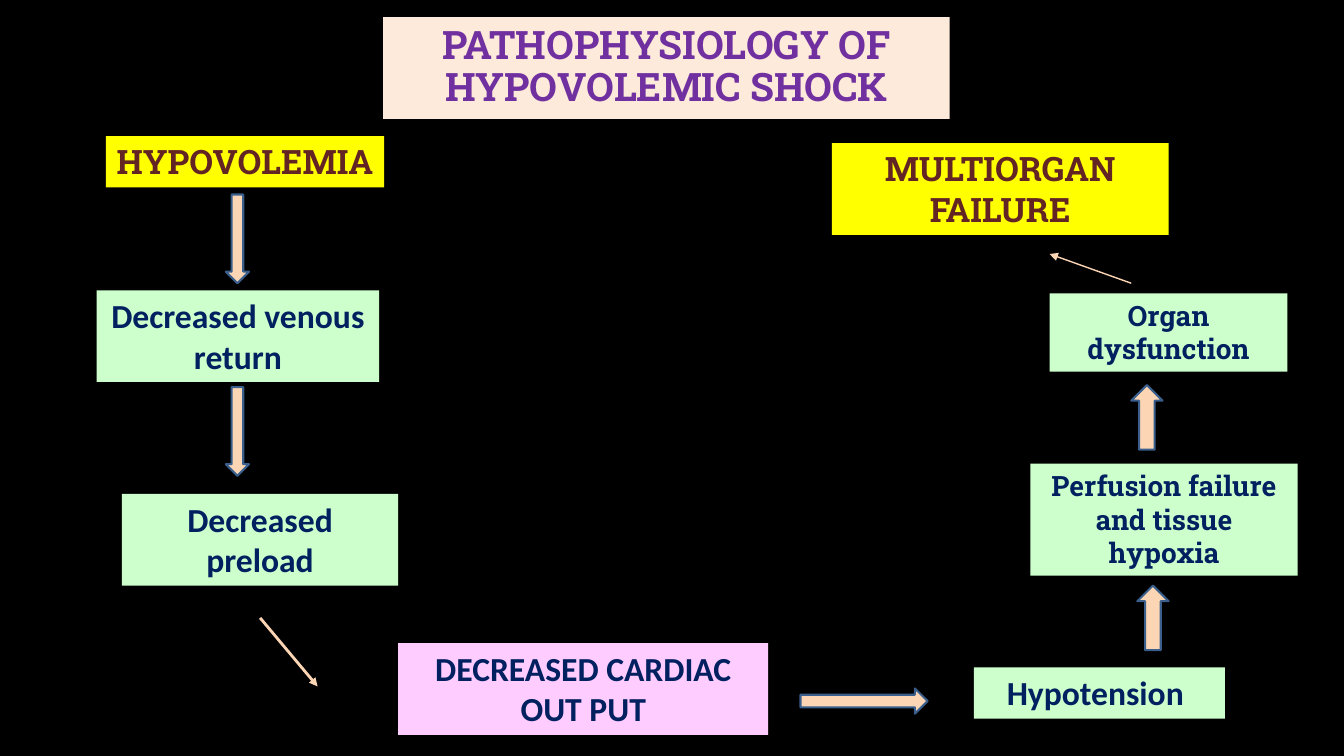
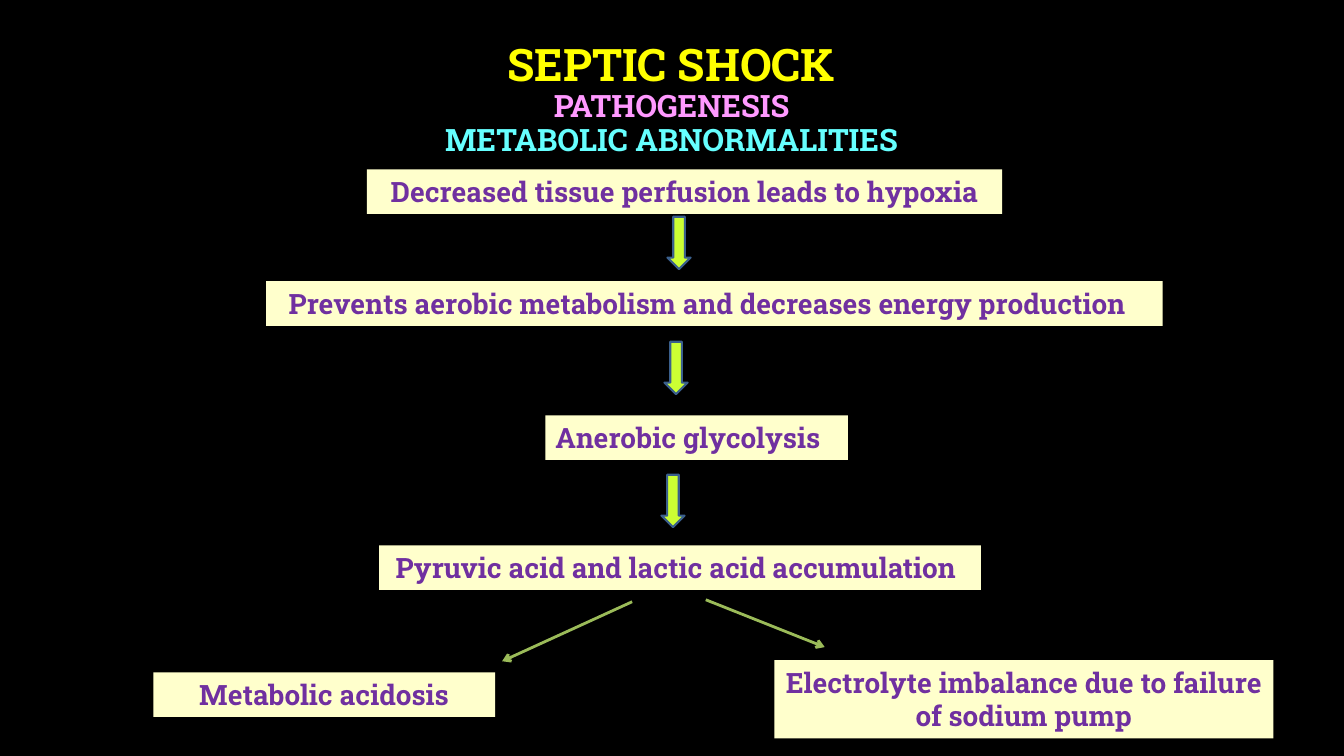
"""Build two flow-chart slides on hypovolemic and septic shock."""
from lxml import etree
from pptx import Presentation
from pptx import util as u
from pptx.dml.color import RGBColor
from pptx.enum import shapes, text
from pptx.oxml.ns import qn

SLAB, SANS = "Roboto Slab", "Calibri"
BLACK, NAVY, PURPLE, BROWN = "000000", "002060", "7030A0", "632523"
YELLOW, GREEN, PINK, CREAM = "FFFF00", "CCFFCC", "FFCCFF", "FFFFCC"
PEACH, LIME, OLIVE, ARROW_EDGE = "FCD5B5", "CCFF33", "9BBB59", "3A5F8C"
INSET = 0.1

STYLES = {
    "end": dict(fill=YELLOW, font=SLAB, size=24, color=BROWN),
    "cause": dict(fill=GREEN, font=SANS, size=24, color=NAVY),
    "output": dict(fill=PINK, font=SANS, size=24, color=NAVY),
    "effect": dict(fill=GREEN, font=SLAB, size=20, color=NAVY),
    "septic": dict(fill=CREAM, font=SLAB, size=20, color=PURPLE),
}
LEFT = {"alignment": text.PP_ALIGN.LEFT}
DOWN, UP, RIGHT = (shapes.MSO_SHAPE.DOWN_ARROW, shapes.MSO_SHAPE.UP_ARROW,
                   shapes.MSO_SHAPE.RIGHT_ARROW)

# Boxes: text, style, left, top, width, lines, frame settings, paragraph settings.
SLIDES = [
    {
        "title": {
            "area": (3.8, 0.17, 5.62, 1.01), "fill": "FDEADA",
            "lines": [("PATHOPHYSIOLOGY OF HYPOVOLEMIC SHOCK", 28, PURPLE)],
        },
        "boxes": [
            ("HYPOVOLEMIA", "end", 1.05, 1.35, 2.76, 1, {"word_wrap": False}, {}),
            ("Decreased venous return", "cause", 0.96, 2.88, 2.8, 2, {}, {}),
            ("Decreased preload", "cause", 1.21, 4.9, 2.74, 2, {}, {}),
            ("DECREASED CARDIAC OUT PUT", "output", 3.95, 6.38, 3.67, 2, {}, {}),
            ("Hypotension", "cause", 9.66, 6.62, 2.49, 1,
             {"margin_right": u.Inches(0.18)}, {}),
            ("Perfusion failure and tissue hypoxia", "effect", 10.22, 4.6, 2.65, 3, {}, {}),
            ("Organ dysfunction", "effect", 10.41, 2.91, 2.36, 2, {}, {}),
            ("MULTIORGAN FAILURE", "end", 8.25, 1.42, 3.34, 2, {}, {}),
        ],
        "arrow_fill": PEACH,
        "arrows": [
            (DOWN, (0.23, 0.88), [(2.24, 1.93), (2.24, 3.84)]),
            (RIGHT, (1.26, 0.25), [(7.94, 6.83)]),
            (UP, (0.31, 0.64), [(11.28, 5.81), (11.22, 3.82)]),
        ],
        "links": [
            ((2.58, 6.13), (3.15, 6.81), PEACH, 2, "triangle"),
            ((11.22, 2.81), (10.41, 2.52), PEACH, 1, "triangle"),
        ],
    },
    {
        "title": {
            "area": (1, 0.24, 11.32, 1.51), "fill": None,
            "lines": [("SEPTIC SHOCK", 32, YELLOW), ("PATHOGENESIS", 22, "FF99FF"),
                      ("METABOLIC ABNORMALITIES", 22, "66FFFF")],
        },
        "boxes": [
            ("Decreased tissue perfusion leads to hypoxia", "septic",
             3.64, 1.68, 6.3, 1, {}, {}),
            ("Prevents aerobic metabolism and decreases energy production", "septic",
             2.64, 2.79, 8.89, 1, {"margin_right": u.Inches(0.24)}, {}),
            ("Anerobic glycolysis", "septic", 5.41, 4.12, 3, 1, {}, LEFT),
            ("Pyruvic acid and lactic acid accumulation", "septic",
             3.76, 5.41, 5.97, 1, {"margin_right": u.Inches(0.18)}, {}),
            ("Metabolic acidosis", "septic", 1.52, 6.67, 3.39, 1, {}, {}),
            ("Electrolyte imbalance due to failure of sodium pump", "septic",
             7.68, 6.55, 4.95, 2, {}, {}),
        ],
        "arrow_fill": LIME,
        "arrows": [(DOWN, (0.23, 0.52), [(6.62, 2.15), (6.59, 3.39), (6.56, 4.71)])],
        "links": [
            ((6.27, 5.97), (4.98, 6.56), OLIVE, 2, "arrow"),
            ((7, 5.95), (8.18, 6.42), OLIVE, 2, "arrow"),
        ],
    },
]


def rgb(value):
    """Turn a hex string into a colour."""
    return RGBColor.from_string(value)


def apply(target, settings):
    """Set attributes from a dict."""
    for key, value in settings.items():
        setattr(target, key, value)


def add_block(slide, kind, area, fill, edge=None):
    """Add a flat preset shape."""
    block = slide.shapes.add_shape(kind, *map(u.Inches, area))
    block.shadow.inherit = False
    if fill:
        block.fill.solid()
        block.fill.fore_color.rgb = rgb(fill)
    else:
        block.fill.background()
    if edge:
        block.line.color.rgb = rgb(edge)
        block.line.width = u.Pt(1.5)
    else:
        block.line.fill.background()
    return block


def write(block, lines, font, frame_settings, paragraph_settings):
    """Write bold lines of (text, size, colour) into a shape."""
    frame = block.text_frame
    apply(frame, {"word_wrap": True, "margin_left": u.Inches(INSET),
                  "margin_right": u.Inches(INSET), **frame_settings})
    for number, (words, size, color) in enumerate(lines):
        paragraph = frame.add_paragraph() if number else frame.paragraphs[0]
        apply(paragraph, {"alignment": text.PP_ALIGN.CENTER, **paragraph_settings})
        run = paragraph.add_run()
        run.text = words
        apply(run.font, {"name": font, "size": u.Pt(size), "bold": True})
        run.font.color.rgb = rgb(color)


def add_title(slide, title):
    """Add the slide title."""
    block = add_block(slide, shapes.MSO_SHAPE.RECTANGLE, title["area"], title["fill"])
    write(block, title["lines"], SLAB,
          {"vertical_anchor": text.MSO_ANCHOR.MIDDLE}, {"line_spacing": 0.9})


def add_box(slide, words, style_name, left, top, width, lines, frame, paragraph):
    """Add a text box whose height follows its number of lines."""
    style = STYLES[style_name]
    height = 0.11 + lines * style["size"] / 60
    block = add_block(slide, shapes.MSO_SHAPE.RECTANGLE,
                      (left, top, width, height), style["fill"])
    write(block, [(words, style["size"], style["color"])], style["font"],
          {"vertical_anchor": text.MSO_ANCHOR.TOP, **frame}, paragraph)


def add_link(slide, start, end, color, width, head):
    """Add a thin line with an arrowhead at its end."""
    link = slide.shapes.add_connector(shapes.MSO_CONNECTOR.STRAIGHT,
                                      *map(u.Inches, start + end))
    link.line.color.rgb = rgb(color)
    link.line.width = u.Pt(width)
    etree.SubElement(link.line._get_or_add_ln(), qn("a:tailEnd"), type=head)
    etree.SubElement(link._element.spPr, qn("a:effectLst"))


def main():
    """Build and save the presentation."""
    deck = Presentation()
    apply(deck, {"slide_width": u.Inches(13.33), "slide_height": u.Inches(7.5)})
    for content in SLIDES:
        slide = deck.slides.add_slide(deck.slide_layouts[6])
        slide.background.fill.solid()
        slide.background.fill.fore_color.rgb = rgb(BLACK)
        add_title(slide, content["title"])
        for box in content["boxes"]:
            add_box(slide, *box)
        for kind, size, places in content["arrows"]:
            for place in places:
                add_block(slide, kind, place + size, content["arrow_fill"], ARROW_EDGE)
        for link in content["links"]:
            add_link(slide, *link)
    deck.save("out.pptx")


if __name__ == "__main__":
    main()
